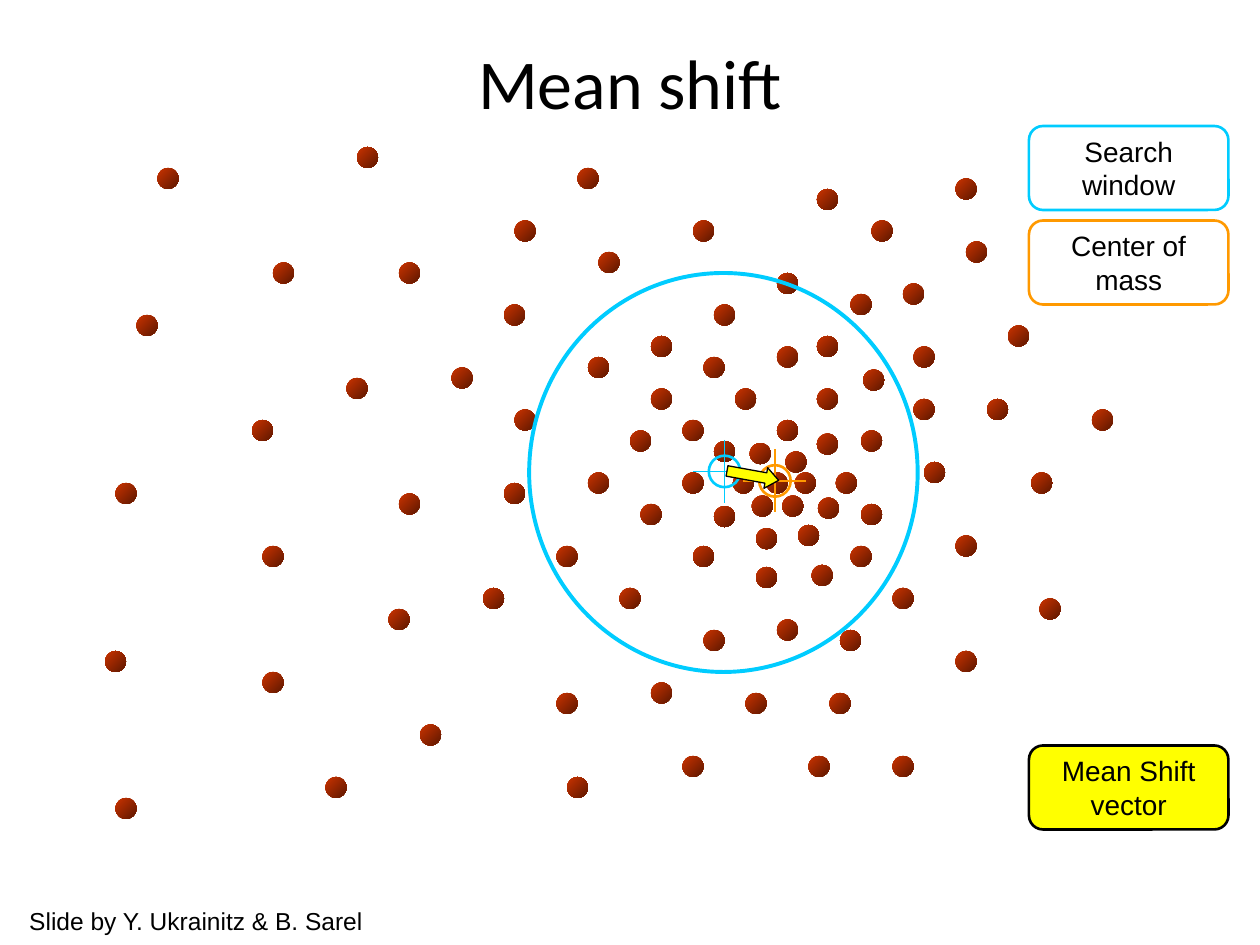
from lxml.etree import SubElement
from pptx import Presentation
from pptx.dml.color import RGBColor
from pptx.enum.shapes import MSO_CONNECTOR, MSO_SHAPE
from pptx.enum.text import MSO_ANCHOR, PP_ALIGN
from pptx.oxml.ns import qn
from pptx.util import Pt

PX = 914400 // 120
COLORS = {
    "dot_light": "CC3300",
    "dot_dark": "5E1800",
    "window": "00CCFF",
    "mass": "FF9900",
    "vector": "FFFF00",
    "black": "000000",
}
TITLE = "Mean shift"
CREDIT = "Slide by Y. Ukrainitz & B. Sarel"
LABELS = [
    ("Search\vwindow", 120, "window", None),
    ("Center of\nmass", 210, "mass", None),
    ("Mean Shift\nvector", 710, "black", "vector"),
]
DOT_SIZE = 20
DOTS = [
    (730, 450), (757, 450), (748, 430), (714, 422), (745, 472), (716, 472),
    (779, 474), (698, 450), (796, 450), (778, 413), (740, 400), (760, 500),
    (720, 503), (680, 482), (650, 450), (680, 420), (820, 480), (810, 520),
    (773, 538), (720, 540), (660, 520), (610, 480), (600, 410), (650, 400),
    (700, 370), (778, 370), (740, 330), (620, 370), (670, 340), (740, 260),
    (680, 290), (778, 320), (778, 180), (810, 280), (822, 352), (820, 410),
    (870, 380), (870, 330), (860, 270), (830, 210), (910, 170), (920, 230),
    (960, 310), (880, 440), (940, 380), (1040, 390), (910, 510), (982, 450),
    (850, 560), (990, 570), (910, 620), (800, 600), (740, 590), (790, 660),
    (850, 720), (770, 720), (710, 660), (670, 600), (590, 560), (620, 650),
    (650, 720), (540, 740), (530, 660), (460, 560), (530, 520), (560, 450),
    (490, 390), (560, 340), (620, 320), (570, 240), (660, 210), (550, 160),
    (490, 210), (480, 290), (430, 350), (480, 460), (380, 470), (370, 580),
    (400, 690), (310, 740), (250, 640), (250, 520), (330, 360), (380, 250),
    (260, 250), (240, 400), (100, 620), (110, 760), (110, 460), (130, 300),
    (150, 160), (340, 140),
]


def color(name):
    return RGBColor.from_string(COLORS[name])


def place(*lengths):
    return [length * PX for length in lengths]


def add_shape(shapes, kind, bounds, fill=None, line=None, width=1.5):
    shape = shapes.add_shape(kind, *place(*bounds))
    shape.shadow.inherit = False
    if fill:
        shape.fill.solid()
        shape.fill.fore_color.rgb = color(fill)
    else:
        shape.fill.background()
    if line:
        shape.line.color.rgb = color(line)
        shape.line.width = Pt(width)
    else:
        shape.line.fill.background()
    return shape


def add_line(shapes, ends, line):
    connector = shapes.add_connector(MSO_CONNECTOR.STRAIGHT, *place(*ends))
    connector.line.color.rgb = color(line)
    connector.line.width = Pt(0.75)
    SubElement(connector._element.spPr, qn("a:effectLst"))


def add_crosshair(shapes, x, y, line, radius=15, arm=30):
    bounds = (x - radius, y - radius, 2 * radius, 2 * radius)
    add_shape(shapes, MSO_SHAPE.OVAL, bounds, line=line)
    add_line(shapes, (x, y - arm, x, y + arm), line)
    add_line(shapes, (x - arm, y, x + arm, y), line)


def write(box, text, size, font="Arial", align=PP_ALIGN.CENTER,
          anchor=MSO_ANCHOR.MIDDLE, wrap=False):
    frame = box.text_frame
    frame.word_wrap = wrap
    frame.vertical_anchor = anchor
    frame.text = text
    for para in frame.paragraphs:
        para.alignment = align
        for span in para.runs:
            span.font.size = Pt(size)
            span.font.name = font
            span.font.color.rgb = color("black")


deck = Presentation()
deck.slide_width, deck.slide_height = place(1200, 900)
page = deck.slides.add_slide(deck.slide_layouts[6])

for left, top in DOTS:
    dot = add_shape(page.shapes, MSO_SHAPE.OVAL, (left, top, DOT_SIZE, DOT_SIZE))
    dot.fill.gradient()
    dot.fill.gradient_angle = 315
    for stop, name in zip(dot.fill.gradient_stops, ("dot_light", "dot_dark")):
        stop.color.rgb = color(name)
        stop.position = 0 if name == "dot_light" else 1

search_window = page.shapes.add_group_shape().shapes
add_shape(search_window, MSO_SHAPE.OVAL, (504, 260, 370, 380), line="window", width=2.25)
add_crosshair(search_window, 690, 449, "window")

for text, top, line, fill in LABELS:
    label = add_shape(page.shapes, MSO_SHAPE.ROUNDED_RECTANGLE, (980, top, 190, 80), fill, line)
    write(label, text, 16)

center_of_mass = page.shapes.add_group_shape().shapes
add_crosshair(center_of_mass, 738, 458, "mass")

arrow = add_shape(page.shapes, MSO_SHAPE.RIGHT_ARROW, (692, 443, 50, 20), "vector", "black", 0.75)
arrow.adjustments[0] = 0.5
arrow.adjustments[1] = 0.62
arrow.rotation = 10.3

title = page.shapes.add_textbox(*place(60, 36, 1080, 84))
write(title, TITLE, 40, font="Calibri", wrap=True)
credit = page.shapes.add_textbox(*place(16, 857, 344, 40))
write(credit, CREDIT, 14, align=PP_ALIGN.LEFT, anchor=MSO_ANCHOR.TOP)

deck.save("out.pptx")
